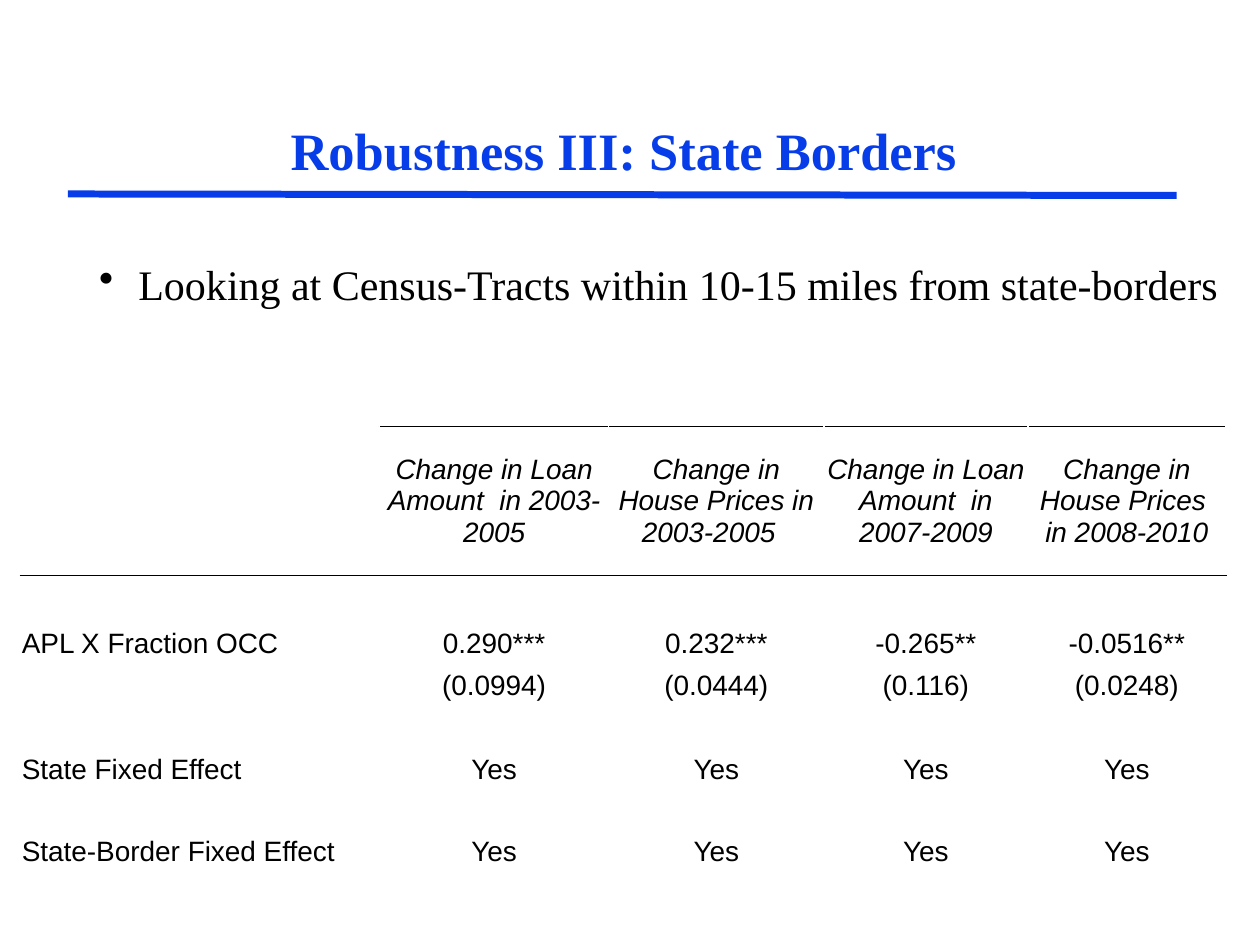
from lxml import etree
from pptx import Presentation
from pptx.dml.color import RGBColor
from pptx.enum import shapes, text
from pptx.oxml.ns import qn
from pptx.util import Cm, Pt

TITLE = "Robustness III: State Borders"
POINT = "Looking at Census-Tracts within 10-15 miles from state-borders"
ROWS = [
    ["", "Change in Loan Amount  in 2003-2005", "Change in House Prices in 2003-2005  ",
     "Change in Loan Amount  in 2007-2009", "Change in House Prices  in 2008-2010"],
    [""] * 5,
    [""] * 5,
    ["APL X Fraction OCC", "0.290***", "0.232***", "-0.265**", "-0.0516**"],
    ["", "(0.0994)", "(0.0444)", "(0.116)", "(0.0248)"],
    [""] * 5,
    ["State Fixed Effect"] + ["Yes"] * 4,
    ["State-Border Fixed Effect"] + ["Yes"] * 4,
]
WIDTHS = [7.24, 4.62, 4.34, 4.11, 3.99]
HEIGHTS = [1.09, 1.63] + [0.85] * 5 + [1.65]
COLORS = {"blue": "063DE8", "black": "000000"}
SERIF, SANS = "Times New Roman", "Arial"


def color(name):
    return RGBColor.from_string(COLORS[name])


def style(para, face, size, tint, bold=False, italic=False):
    for run in para.runs:
        font = run.font
        font.name, font.size = face, Pt(size)
        font.bold, font.italic = bold, italic
        font.color.rgb = color(tint)


def border(cell, sides):
    props = cell._tc.get_or_add_tcPr()
    for place, side in enumerate(sides):
        line = etree.Element(qn("a:ln" + side), w=str(Pt(0.5)))
        fill = etree.SubElement(line, qn("a:solidFill"))
        etree.SubElement(fill, qn("a:srgbClr"), val=COLORS["black"])
        props.insert(place, line)


def sides(row, col):
    if row == 0:
        return "TB" if col else ""
    return {1: "B", 2: "T"}.get(row, "")


def add_title(slide):
    title = slide.shapes.title
    title.left, title.top, title.width, title.height = Cm(1.45), Cm(0.71), Cm(22.25), Cm(3.07)
    frame = title.text_frame
    frame.text = TITLE
    frame.vertical_anchor = text.MSO_ANCHOR.BOTTOM
    para = frame.paragraphs[0]
    para.alignment = text.PP_ALIGN.CENTER
    style(para, SERIF, 30, "blue", bold=True)


def add_rule(slide):
    rule = slide.shapes.add_connector(
        shapes.MSO_CONNECTOR.STRAIGHT, Cm(1.37), Cm(3.91), Cm(23.72), Cm(3.94))
    rule.line.color.rgb = color("blue")
    rule.line.width = Pt(4)
    etree.SubElement(rule._element.spPr, qn("a:effectLst"))


def add_point(slide):
    box = slide.shapes.add_textbox(Cm(1.75), Cm(5.08), Cm(24.51), Cm(1.27))
    frame = box.text_frame
    frame.word_wrap = True
    frame.text = POINT
    para = frame.paragraphs[0]
    style(para, SERIF, 24, "black")
    props = para._p.get_or_add_pPr()
    props.set("marL", str(Cm(0.79)))
    props.set("indent", str(-Cm(0.79)))
    etree.SubElement(props, qn("a:buChar"), char="•")


def add_grid(slide):
    grid = slide.shapes.add_table(
        len(ROWS), len(WIDTHS), Cm(0.41), Cm(8.59), Cm(sum(WIDTHS)), Cm(sum(HEIGHTS))).table
    grid.first_row = grid.horz_banding = False
    for col, width in zip(grid.columns, WIDTHS):
        col.width = Cm(width)
    for row, height in zip(grid.rows, HEIGHTS):
        row.height = Cm(height)
    for r, words in enumerate(ROWS):
        for c, word in enumerate(words):
            cell = grid.cell(r, c)
            cell.fill.background()
            cell.margin_left = cell.margin_right = cell.margin_top = Cm(0.03)
            cell.margin_bottom = 0
            cell.vertical_anchor = text.MSO_ANCHOR.BOTTOM if r else text.MSO_ANCHOR.MIDDLE
            border(cell, sides(r, c))
            if word:
                cell.text = word
                para = cell.text_frame.paragraphs[0]
                para.alignment = text.PP_ALIGN.CENTER if c else text.PP_ALIGN.LEFT
                style(para, SANS, 16, "black", italic=r == 0)
    for c in range(1, len(WIDTHS)):
        grid.cell(0, c).merge(grid.cell(1, c))


def main():
    deck = Presentation()
    deck.slide_width, deck.slide_height = Cm(25.4), Cm(19.05)
    slide = deck.slides.add_slide(deck.slide_layouts[5])
    add_rule(slide)
    add_title(slide)
    add_grid(slide)
    add_point(slide)
    deck.save("out.pptx")


if __name__ == "__main__":
    main()
